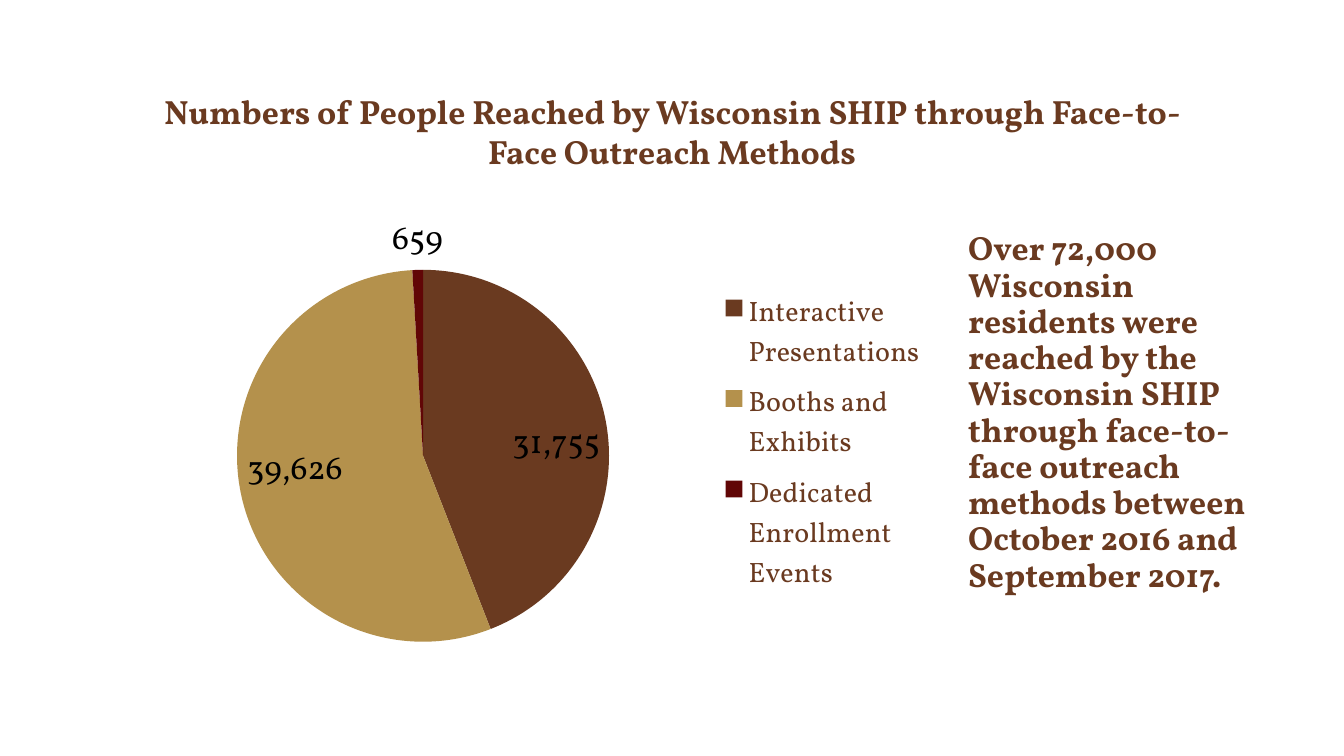
from lxml.etree import SubElement
from pptx import Presentation
from pptx.chart.data import CategoryChartData
from pptx.dml.color import RGBColor
from pptx.enum.chart import XL_CHART_TYPE as ChartType
from pptx.enum.chart import XL_LABEL_POSITION as LabelPosition
from pptx.enum.chart import XL_LEGEND_POSITION as LegendPosition
from pptx.enum.text import MSO_ANCHOR as Anchor
from pptx.enum.text import PP_ALIGN as Align
from pptx.oxml.ns import qn
from pptx.util import Inches, Pt

WIDTH, HEIGHT = 13.33, 7.5
FONT = "Vollkorn"
BROWN, GOLD, MAROON, BLACK = "6A3A20", "B4914C", "610606", "000000"
METHODS = [
    ("Interactive Presentations", 31755, BROWN),
    ("Booths and Exhibits", 39626, GOLD),
    ("Dedicated Enrollment Events", 659, MAROON),
]


def color(hex_text):
    return RGBColor.from_string(hex_text)


def share(left, top, width, height):
    return (Inches(WIDTH * left), Inches(HEIGHT * top),
            Inches(WIDTH * width), Inches(HEIGHT * height))


def set_font(font, size, hex_text, bold=False):
    font.name = FONT
    font.size = Pt(size)
    font.bold = bold
    font.color.rgb = color(hex_text)


def add_text(slide, box, text, size=24, hex_text=BROWN, bold=True,
             align=Align.LEFT, anchor=Anchor.TOP, line_spacing=1.0):
    frame = slide.shapes.add_textbox(*box).text_frame
    frame.word_wrap = True
    frame.vertical_anchor = anchor
    paragraph = frame.paragraphs[0]
    paragraph.alignment = align
    paragraph.line_spacing = line_spacing
    run = paragraph.add_run()
    run.text = text
    set_font(run.font, size, hex_text, bold)


def set_layout(element, before, inner=False, **shares):
    for old in element.findall(qn("c:layout")):
        element.remove(old)
    layout = SubElement(element, qn("c:layout"))
    manual = SubElement(layout, qn("c:manualLayout"))
    settings = {"layoutTarget": "inner"} if inner else {}
    settings |= {"xMode": "edge", "yMode": "edge"} | shares
    for name, value in settings.items():
        SubElement(manual, qn(f"c:{name}")).set("val", str(value))
    element.find(qn(before)).addprevious(layout)


def add_outreach_pie(slide, box):
    data = CategoryChartData(number_format="#,##0")
    data.categories = [name for name, _, _ in METHODS]
    data.add_series("Series 1", [count for _, count, _ in METHODS])
    chart = slide.shapes.add_chart(ChartType.PIE, *box, data).chart
    set_font(chart.font, 10, BROWN)
    chart.has_title = False

    chart.has_legend = True
    legend = chart.legend
    legend.position = LegendPosition.RIGHT
    legend.include_in_layout = False
    set_font(legend.font, 20, BROWN)

    plot = chart.plots[0]
    plot.vary_by_categories = True
    series = plot.series[0]
    for index, (_, _, fill) in enumerate(METHODS):
        point_format = series.points[index].format
        point_format.fill.solid()
        point_format.fill.fore_color.rgb = color(fill)
        point_format.line.fill.background()

    labels = series.data_labels
    labels.show_value = True
    labels.number_format = "#,##0"
    labels.number_format_is_linked = False
    labels.position = LabelPosition.INSIDE_END
    set_font(labels.font, 24, BLACK)
    smallest = series.points[len(METHODS) - 1].data_label
    set_font(smallest.font, 24, BLACK)
    smallest.position = LabelPosition.OUTSIDE_END

    plot_area = chart.element.find(f".//{qn('c:plotArea')}")
    set_layout(plot_area, "c:pieChart", inner=True, x=0.1, y=0.15, w=0.46, h=0.82)
    legend_element = chart.element.find(f".//{qn('c:legend')}")
    set_layout(legend_element, "c:overlay", x=0.68, y=0.18, w=0.27, h=0.71)


def build_outreach_slide(presentation):
    slide = presentation.slides.add_slide(presentation.slide_layouts[6])
    add_text(slide, share(0.1, 0.063, 0.8, 0.17),
             "Numbers of People Reached by Wisconsin SHIP through "
             "Face-to-Face Outreach Methods",
             align=Align.CENTER, anchor=Anchor.BOTTOM)
    add_text(slide, share(0.713, 0.3, 0.244, 0.588),
             "Over 72,000 Wisconsin residents were reached by the Wisconsin SHIP "
             "through face-to-face outreach methods between October 2016 and "
             "September 2017.", line_spacing=0.9)
    add_outreach_pie(slide, share(0.1125, 0.267, 0.613, 0.6))


def main():
    presentation = Presentation()
    presentation.slide_width = Inches(WIDTH)
    presentation.slide_height = Inches(HEIGHT)
    build_outreach_slide(presentation)
    presentation.save("out.pptx")


if __name__ == "__main__":
    main()
